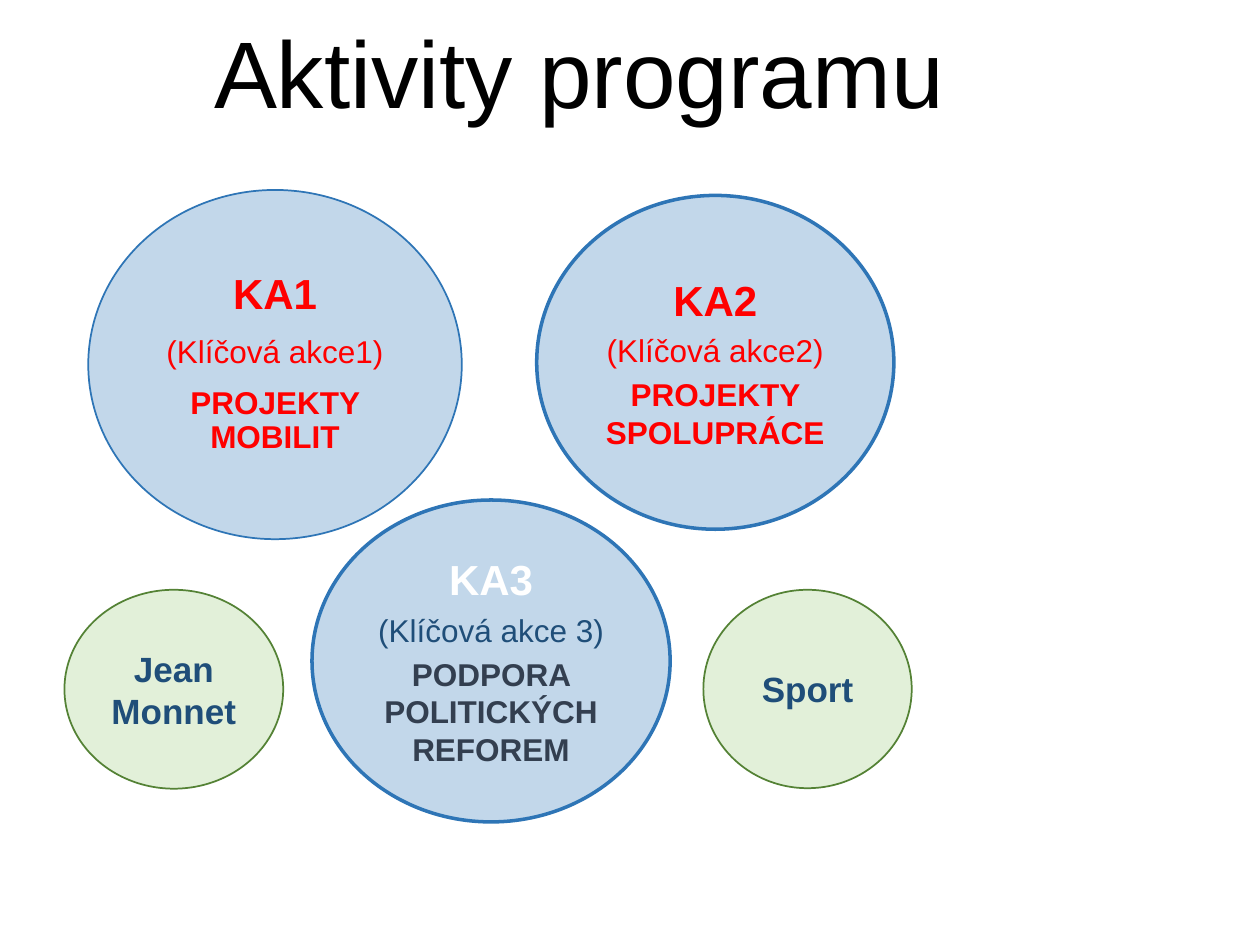
from dataclasses import dataclass
from pptx import Presentation
from pptx.dml.color import RGBColor as Rgb
from pptx.enum.shapes import MSO_SHAPE as Shape
from pptx.enum.text import MSO_ANCHOR as Anchor, PP_ALIGN as Align
from pptx.util import Cm, Pt


@dataclass(frozen=True)
class Theme:
    font: str = "Arial"
    black: str = "000000"
    white: str = "FFFFFF"
    red: str = "FF0000"
    navy: str = "1F4E79"
    slate: str = "333F50"
    blue: str = "C2D7EA"
    rim: str = "2E75B6"
    green: str = "E2F0D9"
    leaf: str = "548235"
    title: int = 54
    head: int = 24
    name: int = 20
    body: int = 18


def write(par, text, size, color, font, bold=False, align=Align.CENTER, gap=0, lead=1.0):
    par.alignment = align
    par.space_before = Pt(gap)
    par.line_spacing = lead
    run = par.add_run()
    run.text = text
    run.font.name = font
    run.font.size = Pt(size)
    run.font.bold = bold
    run.font.color.rgb = Rgb.from_string(color)


class Deck:
    """Hold the theme and the slide, and add each kind of element."""

    def __init__(self, theme):
        self.theme = theme
        self.file = Presentation()
        self.file.slide_width, self.file.slide_height = Cm(25.4), Cm(19.05)
        self.slide = self.file.slides.add_slide(self.file.slide_layouts[0])
        sub = self.slide.placeholders[1].element
        sub.getparent().remove(sub)

    def title(self, text, box):
        head = self.slide.shapes.title
        head.left, head.top, head.width, head.height = map(Cm, box)
        frame = head.text_frame
        frame.vertical_anchor = Anchor.BOTTOM
        write(frame.paragraphs[0], text, self.theme.title, self.theme.black,
              self.theme.font, align=Align.LEFT, lead=0.9)

    def oval(self, box, fill, rim, lines, width=1, gaps=(0,), lead=1.0):
        oval = self.slide.shapes.add_shape(Shape.OVAL, *map(Cm, box))
        oval.shadow.inherit = False
        oval.fill.solid()
        oval.fill.fore_color.rgb = Rgb.from_string(fill)
        oval.line.color.rgb = Rgb.from_string(rim)
        oval.line.width = Pt(width)
        frame = oval.text_frame
        frame.word_wrap = True
        frame.vertical_anchor = Anchor.MIDDLE
        for i, ((text, size, color, bold), gap) in enumerate(zip(lines, gaps)):
            par = frame.add_paragraph() if i else frame.paragraphs[0]
            write(par, text, size, color, self.theme.font, bold=bold, gap=gap, lead=lead)

    def action(self, box, texts, colors, **form):
        sizes = (self.theme.head, self.theme.body, self.theme.body)
        lines = zip(texts, sizes, colors, (True, False, True))
        self.oval(box, self.theme.blue, self.theme.rim, lines, **form)

    def extra(self, box, text):
        line = (text, self.theme.name, self.theme.navy, True)
        self.oval(box, self.theme.green, self.theme.leaf, [line])


def main():
    theme = Theme()
    deck = Deck(theme)
    reds = (theme.red,) * 3
    mixed = (theme.white, theme.navy, theme.slate)
    tight = {"width": 2, "gaps": (0, 3.6, 3.6)}
    loose = {"gaps": (0, 10, 10), "lead": 0.9}

    deck.title("Aktivity programu", (4.06, 0.15, 15.82, 2.57))
    deck.extra((1.3, 11.89, 4.41, 4.01), "Jean Monnet")
    deck.action((10.82, 3.94, 7.2, 6.73),
                ("KA2", "(Klíčová akce2)", "PROJEKTY SPOLUPRÁCE"), reds, **tight)
    deck.extra((14.18, 11.89, 4.2, 4), "Sport")
    deck.action((6.29, 10.08, 7.22, 6.49),
                ("KA3", "(Klíčová akce 3)", "PODPORA POLITICKÝCH REFOREM"), mixed, **tight)
    deck.action((1.78, 3.83, 7.53, 7.04),
                ("KA1", "(Klíčová akce1)", "PROJEKTY MOBILIT"), reds, **loose)
    deck.file.save("out.pptx")


if __name__ == "__main__":
    main()
